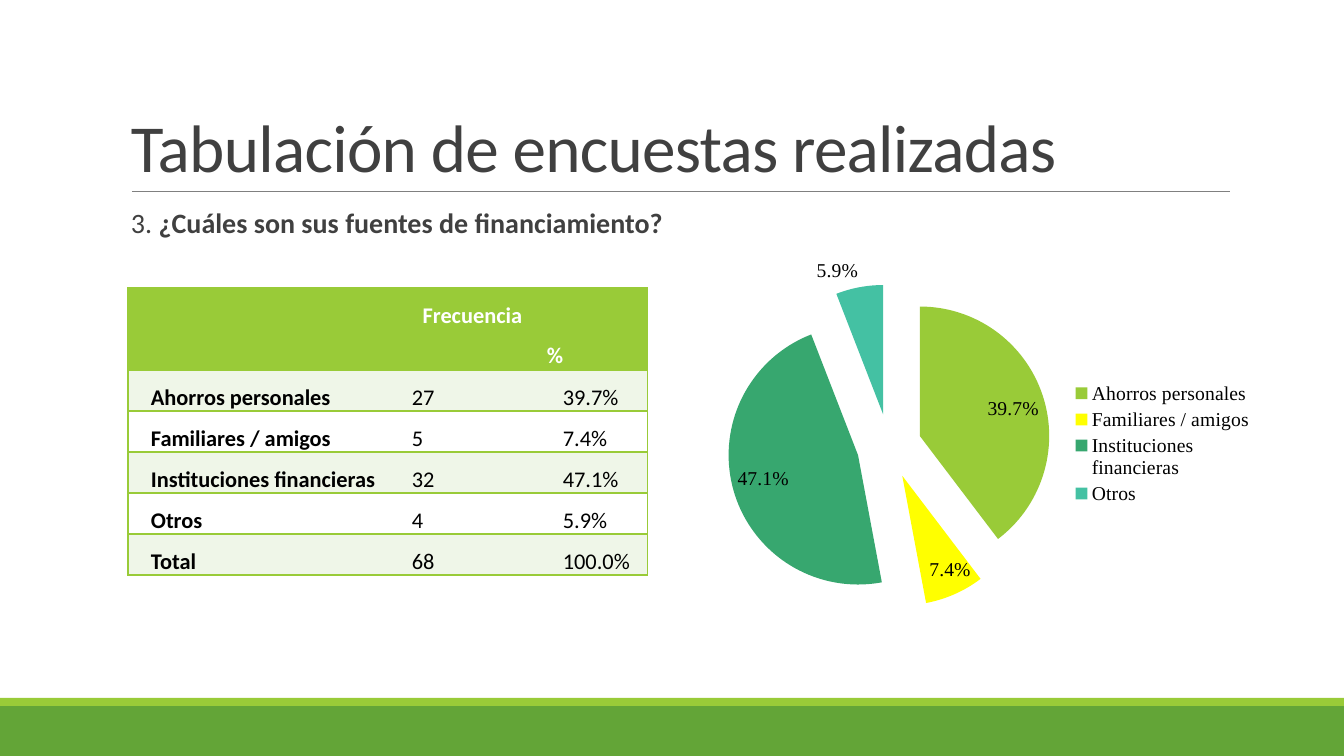
from lxml.etree import SubElement
from pptx import Presentation
from pptx.chart.data import CategoryChartData
from pptx.dml.color import RGBColor
from pptx.enum.chart import XL_CHART_TYPE, XL_LABEL_POSITION, XL_LEGEND_POSITION
from pptx.enum.shapes import MSO_CONNECTOR, MSO_SHAPE
from pptx.enum.text import MSO_ANCHOR, PP_ALIGN
from pptx.oxml.ns import qn
from pptx.util import Emu, Pt

LIME, GREEN, DARK, PALE = "99CB38", "63A537", "404040", "EFF6E8"
HEADINGS = ["", "Frecuencia", "%"]
SOURCES = [
    ("Ahorros personales", 27, 0.397, LIME),
    ("Familiares / amigos", 5, 0.074, "FFFF00"),
    ("Instituciones financieras", 32, 0.471, "37A76F"),
    ("Otros", 4, 0.059, "44C1A3"),
]
COLUMN_WIDTHS = [261, 151, 108]
ROW_HEIGHT = 41


def px(length):
    return Emu(round(length * 914400 / 100.8))


def color(value):
    return RGBColor.from_string(value)


def paint(target, value):
    target.fill.solid()
    target.fill.fore_color.rgb = color(value)


def style(font, size, value, bold=False, name="Calibri"):
    font.name, font.size, font.bold = name, Pt(size), bold
    font.color.rgb = color(value)


def add_band(slide, top, height, value):
    band = slide.shapes.add_shape(MSO_SHAPE.RECTANGLE, 0, px(top), px(1344), px(height))
    band.shadow.inherit = False
    paint(band, value)
    band.line.fill.background()


def add_rule(slide, left, right, y):
    rule = slide.shapes.add_connector(MSO_CONNECTOR.STRAIGHT, px(left), px(y), px(right), px(y))
    rule.line.color.rgb = color("808080")
    rule.line.width = Pt(0.5)
    SubElement(rule._element.spPr, qn("a:effectLst"))


def add_text(slide, box, parts, size, spacing, anchor, tracking=0):
    frame = slide.shapes.add_textbox(*map(px, box)).text_frame
    frame.word_wrap = True
    frame.vertical_anchor = anchor
    frame.margin_left = frame.margin_right = px(10)
    paragraph = frame.paragraphs[0]
    paragraph.line_spacing = spacing
    for words, bold in parts:
        run = paragraph.add_run()
        run.text = words
        style(run.font, size, DARK, bold)
        if tracking:
            run.font._element.set("spc", str(tracking))


def set_borders(cell, visible):
    properties = cell._tc.get_or_add_tcPr()
    for position, side in enumerate(("L", "R", "T", "B")):
        border = properties.makeelement(qn(f"a:ln{side}"), {"w": str(Pt(1))})
        if side in visible:
            fill = SubElement(border, qn("a:solidFill"))
            SubElement(fill, qn("a:srgbClr"), val=LIME)
        else:
            SubElement(border, qn("a:noFill"))
        properties.insert(position, border)


def fill_cell(cell, words, row, column):
    header = row == 0
    paint(cell, LIME if header else PALE if row % 2 else "FFFFFF")
    set_borders(cell, "TB" + {0: "L", 2: "R"}.get(column, ""))
    cell.margin_left = cell.margin_right = px(7)
    cell.margin_top = cell.margin_bottom = 0
    percent_heading = header and column == 2
    cell.vertical_anchor = MSO_ANCHOR.BOTTOM if percent_heading else MSO_ANCHOR.TOP
    cell.text_frame.text = words
    paragraph = cell.text_frame.paragraphs[0]
    paragraph.line_spacing = 1.5
    paragraph.alignment = PP_ALIGN.CENTER if header and column == 1 else PP_ALIGN.JUSTIFY
    if not percent_heading:
        paragraph._p.get_or_add_pPr().set("indent", str(px(16)))
    style(paragraph.font, 16, "FFFFFF" if header else "000000", header or column == 0)
    for run in paragraph.runs:
        style(run.font, 16, "FFFFFF" if header else "000000", header or column == 0)


def add_frequency_table(slide, left, top):
    total = sum(count for _, count, _, _ in SOURCES)
    rows = [HEADINGS]
    rows += [(name, str(count), f"{share:.1%}") for name, count, share, _ in SOURCES]
    rows.append(("Total", str(total), "100.0%"))
    heights = [2 * ROW_HEIGHT] + [ROW_HEIGHT] * (len(rows) - 1)
    table = slide.shapes.add_table(
        len(rows), len(HEADINGS), px(left), px(top), px(sum(COLUMN_WIDTHS)), px(sum(heights))
    ).table
    for column, width in zip(table.columns, COLUMN_WIDTHS):
        column.width = px(width)
    for row, (height, entries) in enumerate(zip(heights, rows)):
        table.rows[row].height = px(height)
        for column, words in enumerate(entries):
            fill_cell(table.cell(row, column), words, row, column)


def add_share_pie(slide, box):
    data = CategoryChartData(number_format="0.0%")
    data.categories = [name for name, *_ in SOURCES]
    data.add_series("Series 1", [share for _, _, share, _ in SOURCES])
    chart = slide.shapes.add_chart(XL_CHART_TYPE.PIE, *map(px, box), data).chart
    style(chart.font, 10, "000000", name="Times New Roman")
    chart.has_title = False
    chart.has_legend = True
    chart.legend.position = XL_LEGEND_POSITION.RIGHT
    chart.legend.include_in_layout = False
    style(chart.legend.font, 14, "000000", name="Times New Roman")

    plot = chart.plots[0]
    plot.vary_by_categories = True
    shares = plot.series[0]
    for index, (*_, value) in enumerate(SOURCES):
        wedge = shares.points[index].format
        paint(wedge, value)
        wedge.line.fill.background()
    explosion = shares._element.makeelement(qn("c:explosion"), {"val": "25"})
    shares._element.find(qn("c:tx")).addnext(explosion)

    labels = shares.data_labels
    labels.show_value = True
    labels.number_format = "0.0%"
    labels.number_format_is_linked = False
    labels.position = XL_LABEL_POSITION.BEST_FIT
    style(labels.font, 14, "000000", name="Times New Roman")


def main():
    presentation = Presentation()
    presentation.slide_width, presentation.slide_height = px(1344), px(756)
    slide = presentation.slides.add_slide(presentation.slide_layouts[6])
    add_band(slide, 706, 50, GREEN)
    add_band(slide, 698, 8, LIME)
    add_rule(slide, 132, 1230, 191)
    add_text(slide, (121, 31, 1109, 160), [("Tabulación de encuestas realizadas", False)],
             48, 0.85, MSO_ANCHOR.BOTTOM, tracking=-50)
    add_text(slide, (121, 204, 1109, 444),
             [("3. ", False), ("¿Cuáles son sus fuentes de financiamiento?", True)],
             20, 0.9, MSO_ANCHOR.TOP)
    add_frequency_table(slide, 128, 288)
    add_share_pie(slide, (709, 244, 555, 399))
    presentation.save("out.pptx")


if __name__ == "__main__":
    main()
